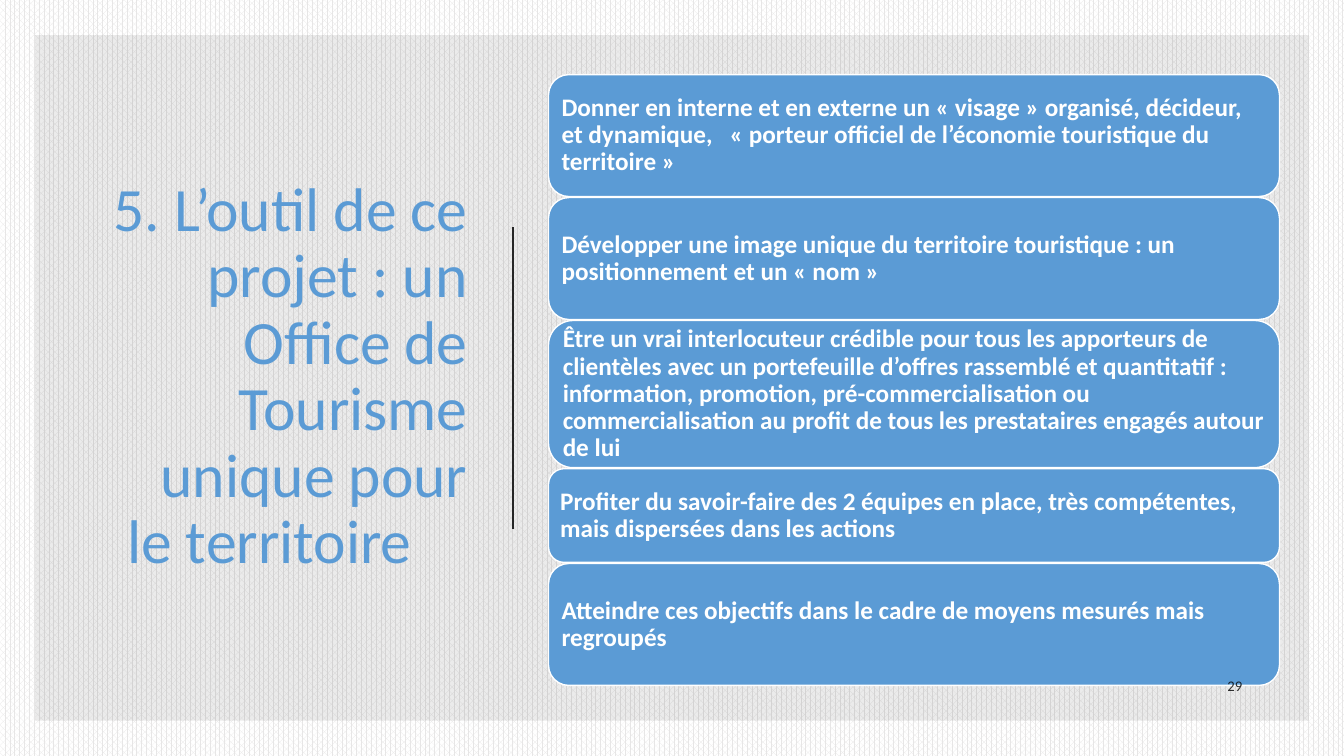
from pptx import Presentation
from pptx.dml.color import RGBColor
from pptx.enum.dml import MSO_PATTERN
from pptx.enum.shapes import MSO_CONNECTOR, MSO_SHAPE
from pptx.enum.text import MSO_ANCHOR, MSO_AUTO_SIZE, PP_ALIGN
from pptx.oxml.ns import qn
from pptx.util import Inches, Pt
from lxml import etree

BLUE = RGBColor(0x5B, 0x9B, 0xD5)
WHITE = RGBColor(0xFF, 0xFF, 0xFF)
BLACK = RGBColor(0x00, 0x00, 0x00)
CHARCOAL = RGBColor(0x26, 0x26, 0x26)
PATTERN_GREY = RGBColor(0xE7, 0xE6, 0xE6)

PATTERN = MSO_PATTERN.PERCENT_70
RECTANGLE = MSO_SHAPE.RECTANGLE
ROUNDED = MSO_SHAPE.ROUNDED_RECTANGLE
STRAIGHT = MSO_CONNECTOR.STRAIGHT
MIDDLE = MSO_ANCHOR.MIDDLE
NO_AUTOFIT = MSO_AUTO_SIZE.NONE
LEFT, RIGHT = PP_ALIGN.LEFT, PP_ALIGN.RIGHT

FONT = "Calibri"
TITLE = "5. L’outil de ce projet : un Office de Tourisme unique pour le territoire    "
OBJECTIVES = [
    ("Donner en interne et en externe un « visage » organisé, décideur, et dynamique,   "
     "« porteur officiel de l’économie touristique du territoire »", 1.21),
    ("Développer une image unique du territoire touristique : un positionnement "
     "et un « nom »", 1.21),
    ("Être un vrai interlocuteur crédible pour tous les apporteurs de clientèles avec un "
     "portefeuille d’offres rassemblé et quantitatif : information, promotion, "
     "pré-commercialisation ou commercialisation au profit de tous les prestataires "
     "engagés autour de lui", 1.46),
    ("Profiter du savoir-faire des 2 équipes en place, très compétentes, mais dispersées "
     "dans les actions", 0.93),
    ("Atteindre ces objectifs dans le cadre de moyens mesurés mais regroupés", 1.21),
]
OBJECTIVE_GAP = 0.01
OBJECTIVE_INSET = Inches(0.07)


def set_opacity(owner, percent):
    color = next(owner.iter(qn("a:srgbClr")))
    etree.SubElement(color, qn("a:alpha")).set("val", str(percent * 1000))


def write(frame, text, size, color, align, bold=False, spacing=1.0):
    frame.text = text
    frame.word_wrap = True
    frame.auto_size = NO_AUTOFIT
    frame.vertical_anchor = MIDDLE
    paragraph = frame.paragraphs[0]
    paragraph.alignment = align
    paragraph.line_spacing = spacing
    font = paragraph.runs[0].font
    font.name = FONT
    font.size = Pt(size)
    font.bold = bold
    font.color.rgb = color


def add_backdrop(slide, left, top, width, height):
    fill = slide.background.fill
    fill.patterned()
    fill.pattern = PATTERN
    fill.fore_color.rgb = PATTERN_GREY
    fill.back_color.rgb = WHITE
    panel = slide.shapes.add_shape(
        RECTANGLE, Inches(left), Inches(top), Inches(width), Inches(height))
    panel.shadow.inherit = False
    panel.fill.solid()
    panel.fill.fore_color.rgb = BLACK
    set_opacity(panel.fill._xPr, 8)
    panel.line.fill.background()
    slide.shapes._spTree.insert(2, panel._element)


def add_heading(slide, left, top, width, height):
    heading = slide.shapes.title
    heading.left, heading.top = Inches(left), Inches(top)
    heading.width, heading.height = Inches(width), Inches(height)
    write(heading.text_frame, TITLE, 44, BLUE, RIGHT, spacing=0.9)


def add_divider(slide, x, top, height):
    divider = slide.shapes.add_connector(
        STRAIGHT, Inches(x), Inches(top), Inches(x), Inches(top + height))
    divider.line.color.rgb = CHARCOAL
    divider.line.width = Pt(1.5)
    etree.SubElement(divider._element.spPr, qn("a:effectLst"))


def add_objectives(slide, left, top, width):
    for text, height in OBJECTIVES:
        objective = slide.shapes.add_shape(
            ROUNDED, Inches(left), Inches(top), Inches(width), Inches(height))
        objective.shadow.inherit = False
        objective.fill.solid()
        objective.fill.fore_color.rgb = BLUE
        objective.line.color.rgb = WHITE
        objective.line.width = Pt(1)
        frame = objective.text_frame
        frame.margin_left = frame.margin_right = OBJECTIVE_INSET
        frame.margin_top = frame.margin_bottom = OBJECTIVE_INSET
        write(frame, text, 18, WHITE, LEFT, bold=True, spacing=0.9)
        top += height + OBJECTIVE_GAP


def add_page_number(slide, left, top, width, height):
    page_number = slide.shapes.add_textbox(
        Inches(left), Inches(top), Inches(width), Inches(height))
    write(page_number.text_frame, "29", 10.5, BLACK, RIGHT)
    set_opacity(page_number._element, 80)


def main():
    deck = Presentation()
    deck.slide_width, deck.slide_height = Inches(13.33), Inches(7.5)
    slide = deck.slides.add_slide(deck.slide_layouts[5])
    add_backdrop(slide, 0.35, 0.35, 12.63, 6.8)
    add_divider(slide, 5.09, 2.25, 3)
    add_heading(slide, 0.92, 1.05, 3.82, 5.39)
    add_objectives(slide, 5.44, 0.74, 7.25)
    add_page_number(slide, 11.56, 6.6, 0.86, 0.4)
    deck.save("out.pptx")


if __name__ == "__main__":
    main()
